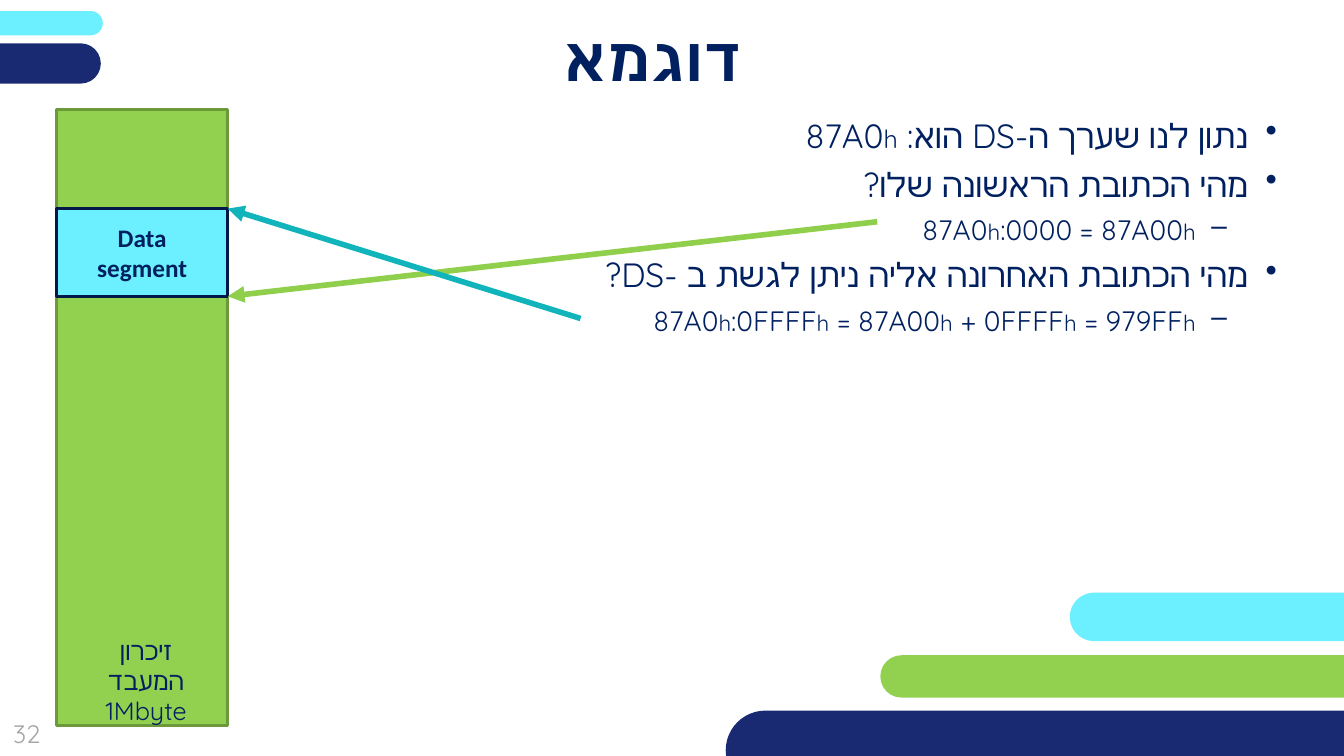
import itertools
import pptx
import pptx.util
import pptx.dml.color
import pptx.enum.shapes
import pptx.enum.text
import pptx.oxml
import pptx.oxml.ns

Pt = pptx.util.Pt
RGB = pptx.dml.color.RGBColor.from_string
FORM = pptx.enum.shapes.MSO_SHAPE
ALIGN = pptx.enum.text.PP_ALIGN
MID = pptx.enum.text.MSO_ANCHOR.MIDDLE
qn = pptx.oxml.ns.qn

theme = {
    "navy": "192A72", "cyan": "6CF0FF", "green": "92D050",
    "ink": "002060", "gray": "A6A6A6", "moss": "6C9A3B", "dark": "001847",
    "lime": "8FCF4B", "teal": "12B4BC",
    "font": "Quicksand", "block": "Calibri",
    "title": 44, "label": 18, "sizes": [24, 20], "small": [18, 16],
}

deck = pptx.Presentation()
deck.slide_width = pptx.util.Inches(13.33)
deck.slide_height = pptx.util.Inches(7.5)
slide = deck.slides.add_slide(deck.slide_layouts[5])
shapes = slide.shapes


def place(x, y, *size):
    """Turn percent shares of the slide's width and height into lengths."""
    sides = itertools.cycle([deck.slide_width, deck.slide_height])
    return [int(side * share / 100) for share, side in zip((x, y, *size), sides)]


def style(run, size, color="ink", font="font", bold=False):
    """Format a run, with the same font for Latin and Hebrew letters."""
    run.font.size = Pt(size)
    run.font.bold = bold
    run.font.color.rgb = RGB(theme[color])
    run.font.name = theme[font]
    face = run._r.get_or_add_rPr().makeelement(qn("a:cs"), {"typeface": theme[font]})
    run.font._element.find(qn("a:latin")).addnext(face)


# Rounded bars
bars = [
    ("navy", 54, 94, 49.1, 10.5),
    ("cyan", 79.6, 78.4, 28.7, 6.4),
    ("cyan", -10.05, 1.47, 17.7, 3.2),
    ("navy", -16.88, 5.73, 24.38, 5.33),
    ("green", 65.5, 86.67, 39.1, 5.6),
]
for color, *box in bars:
    bar = shapes.add_shape(FORM.ROUNDED_RECTANGLE, *place(*box))
    bar.adjustments[0] = 0.5
    bar.shadow.inherit = False
    bar.fill.solid()
    bar.fill.fore_color.rgb = RGB(theme[color])
    bar.line.fill.background()

# Bullets: level and text; each "h" is set smaller
points = [
    (0, "נתון לנו שערך ה-DS הוא: 87A0h"),
    (0, "מהי הכתובת הראשונה שלו?"),
    (1, "87A0h:0000 = 87A00h"),
    (0, "מהי הכתובת האחרונה אליה ניתן לגשת ב -DS?"),
    (1, "87A0h:0FFFFh = 87A00h + 0FFFFh = 979FFh"),
]
marks = [("•", 0.29, 0.29), ("–", 0.81, 0.31)]
frame = shapes.add_textbox(*place(36.53, 14.53, 59.26, 59.2)).text_frame
frame.word_wrap = True
for index, (level, text) in enumerate(points):
    para = frame.add_paragraph() if index else frame.paragraphs[0]
    mark, margin, hang = marks[level]
    props = para._p.get_or_add_pPr()
    props.set("marL", str(pptx.util.Inches(margin)))
    props.set("indent", str(-pptx.util.Inches(hang)))
    props.set("rtl", "1")
    props.append(props.makeelement(qn("a:buChar"), {"char": mark}))
    para.level = level
    para.alignment = ALIGN.RIGHT
    para.space_after = Pt(6)
    for small, part in itertools.groupby(text, lambda sign: sign == "h"):
        run = para.add_run()
        run.text = "".join(part)
        style(run, theme["small" if small else "sizes"][level])

# Memory column and its data segment
left, width = 4.2, 12.75
right = left + width
top, bottom = 27.6, 39.2
blocks = []
for fill, edge, y, height in [
    ("green", "moss", 14.53, 81.47),
    ("cyan", "dark", top, bottom - top),
]:
    block = shapes.add_shape(FORM.RECTANGLE, *place(left, y, width, height))
    block.shadow.inherit = False
    block.fill.solid()
    block.fill.fore_color.rgb = RGB(theme[fill])
    block.line.color.rgb = RGB(theme[edge])
    block.line.width = Pt(2)
    blocks.append(block)

# Title and centred labels
title = shapes.title
title.left, title.top, title.width, title.height = place(8.4, 2.27, 80.4, 10.53)
head = title.text_frame
head.margin_left = head.margin_right = head.margin_top = head.margin_bottom = 0
label = shapes.add_textbox(*place(5.7, 83.33, 10.35, 13.47))
number = shapes.add_textbox(*place(-1.35, 93.2, 6.7, 7.6))
size = theme["label"]
for shape, text, rtl, anchor, look in [
    (title, "דוגמא", "1", MID, (theme["title"], "ink", "font", True)),
    (blocks[1], "Data\vsegment", "1", MID, (size, "ink", "block", True)),
    (label, "זיכרון המעבד 1Mbyte", "1", None, (size,)),
    (number, "32", "0", MID, (size, "gray")),
]:
    frame = shape.text_frame
    frame.text = text
    frame.word_wrap = True
    frame.vertical_anchor = anchor
    para = frame.paragraphs[0]
    para.alignment = ALIGN.CENTER
    para._p.get_or_add_pPr().set("rtl", rtl)
    for run in para.runs:
        style(run, *look)

# Arrows from the answers to the segment's edges
for color, start, end in [
    ("lime", (65.27, 29.33), (right, bottom)),
    ("teal", (43.2, 42.13), (right, top)),
]:
    arrow = shapes.add_connector(
        pptx.enum.shapes.MSO_CONNECTOR.STRAIGHT, *place(*start), *place(*end))
    arrow.line.color.rgb = RGB(theme[color])
    arrow.line.width = Pt(4)
    line = arrow.line._get_or_add_ln()
    line.append(line.makeelement(qn("a:tailEnd"), {"type": "triangle"}))
    line.addnext(line.makeelement(qn("a:effectLst"), {}))

deck.save("out.pptx")
